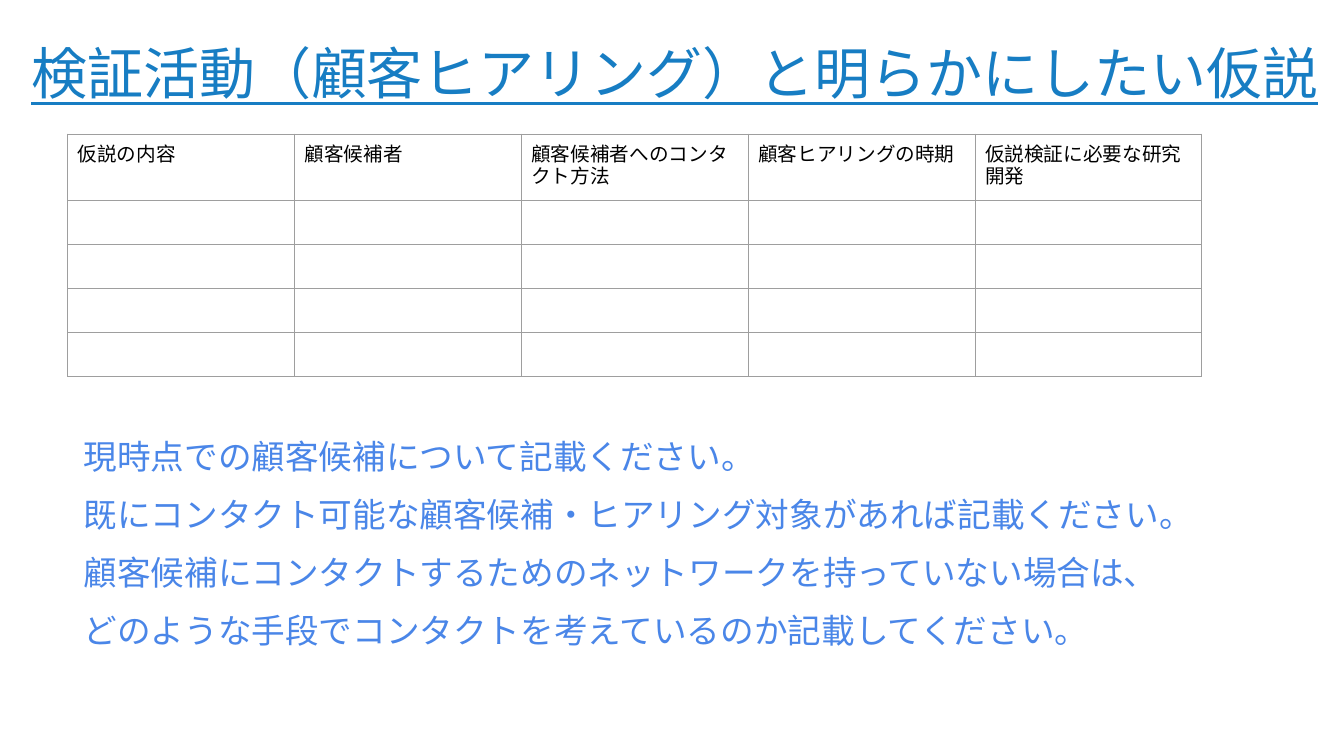
from lxml import etree
from pptx import Presentation
from pptx.dml.color import RGBColor
from pptx.enum.text import MSO_ANCHOR, MSO_AUTO_SIZE, PP_ALIGN
from pptx.oxml.ns import qn
from pptx.util import Inches, Pt

LEFT, TOP, MIDDLE = PP_ALIGN.LEFT, MSO_ANCHOR.TOP, MSO_ANCHOR.MIDDLE
NO_FIT = MSO_AUTO_SIZE.NONE
COLORS = {"title": "177DC3", "guide": "4A86E8", "text": "000000", "border": "9E9E9E"}
JAPANESE_FONT = "Noto Sans CJK JP"
HEADERS = ["仮説の内容", "顧客候補者", "顧客候補者へのコンタクト方法",
           "顧客ヒアリングの時期", "仮説検証に必要な研究開発"]
GUIDES = ["現時点での顧客候補について記載ください。",
          "既にコンタクト可能な顧客候補・ヒアリング対象があれば記載ください。",
          "顧客候補にコンタクトするためのネットワークを持っていない場合は、",
          "どのような手段でコンタクトを考えているのか記載してください。"]
ROW_COUNT = 5


def format_span(span, size, color, font):
    span.font.size = Pt(size)
    span.font.color.rgb = RGBColor.from_string(COLORS[color])
    span.font.name = font
    etree.SubElement(span.font._element, qn("a:ea"), typeface=font)


def set_frame(frame, top_inset, anchor):
    frame.margin_left = frame.margin_right = frame.margin_bottom = 0
    frame.margin_top = Inches(top_inset)
    frame.vertical_anchor = anchor
    frame.word_wrap = True
    frame.auto_size = NO_FIT


deck = Presentation()
deck.slide_width, deck.slide_height = Inches(13.33), Inches(7.5)
page = deck.slides.add_slide(deck.slide_layouts[5])

# Title
title = page.shapes.title
title.left, title.top = Inches(0.31), Inches(0.37)
title.width, title.height = Inches(13.36), Inches(0.69)
set_frame(title.text_frame, 0.01, MIDDLE)
title.text_frame.text = "検証活動（顧客ヒアリング）と明らかにしたい仮説"
para = title.text_frame.paragraphs[0]
para.alignment = LEFT
format_span(para.runs[0], 40, "title", JAPANESE_FONT)
para.runs[0].font.underline = True

# Guidance
box = page.shapes.add_textbox(Inches(0.83), Inches(4.18), Inches(11.63), Inches(2.42))
set_frame(box.text_frame, 0.11, TOP)
box.text_frame.text = "\n".join(GUIDES)
for para in box.text_frame.paragraphs:
    para.line_spacing = 1.08
    para.space_before = Pt(10.3)
    format_span(para.runs[0], 24, "guide", JAPANESE_FONT)

# Hypothesis table
table = page.shapes.add_table(ROW_COUNT, len(HEADERS), Inches(0.67), Inches(1.33),
                              Inches(11.25), Inches(2.4)).table
table.first_row = table.horz_banding = False
for index, row in enumerate(table.rows):
    row.height = Inches(0.66 if index == 0 else 0.43)
    for column, cell in enumerate(row.cells):
        cell.margin_left = cell.margin_right = Inches(0.1)
        cell.margin_top = cell.margin_bottom = Inches(0.1)
        para = cell.text_frame.paragraphs[0]
        if index == 0:
            para.text = HEADERS[column]
            format_span(para.runs[0], 14, "text", "Arial")
        else:
            etree.SubElement(para._p, qn("a:endParaRPr"), sz="1400")

        # Cell borders come before the fill
        properties = cell._tc.get_or_add_tcPr()
        for side in ("lnL", "lnR", "lnT", "lnB"):
            line = etree.SubElement(properties, qn(f"a:{side}"), w=str(Pt(0.75)))
            fill = etree.SubElement(line, qn("a:solidFill"))
            etree.SubElement(fill, qn("a:srgbClr"), val=COLORS["border"])
        cell.fill.background()

deck.save("out.pptx")
